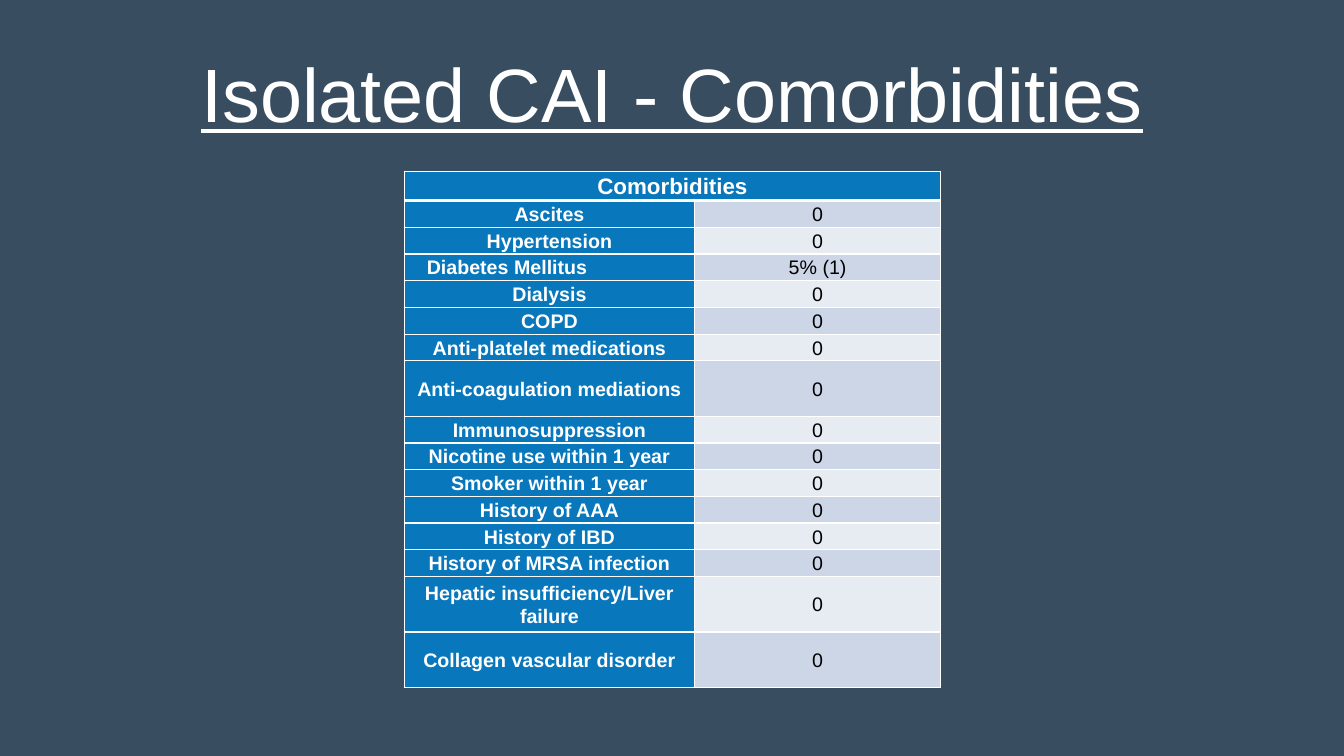
from lxml import etree
from pptx import Presentation
from pptx import util as u
from pptx.dml import color
from pptx.enum import text
from pptx.oxml import ns

BACKGROUND = color.RGBColor(0x38, 0x4D, 0x60)
BLUE = color.RGBColor(0x08, 0x77, 0xBC)
BAND_DARK = color.RGBColor(0xCC, 0xD6, 0xE7)
BAND_LIGHT = color.RGBColor(0xE7, 0xEC, 0xF3)
WHITE = color.RGBColor(0xFF, 0xFF, 0xFF)
BLACK = color.RGBColor(0, 0, 0)

TABBED = "\tDiabetes Mellitus\t"
TALL_ROWS = {
    "Anti-coagulation mediations",
    "Hepatic insufficiency/Liver failure",
    "Collagen vascular disorder",
}
COMORBIDITIES = [
    ("Ascites", "0"),
    ("Hypertension", "0"),
    (TABBED, "5% (1)"),
    ("Dialysis", "0"),
    ("COPD", "0"),
    ("Anti-platelet medications", "0"),
    ("Anti-coagulation mediations", "0"),
    ("Immunosuppression", "0"),
    ("Nicotine use within 1 year", "0"),
    ("Smoker within 1 year", "0"),
    ("History of AAA", "0"),
    ("History of IBD", "0"),
    ("History of MRSA infection", "0"),
    ("Hepatic insufficiency/Liver failure", "0"),
    ("Collagen vascular disorder", "0"),
]


class Deck:
    font = "Arial"

    def __init__(self):
        self.prs = Presentation()
        self.prs.slide_width = u.Inches(13.33)
        self.prs.slide_height = u.Inches(7.5)
        self.s = self.prs.slides.add_slide(self.prs.slide_layouts[5])
        self.s.background.fill.solid()
        self.s.background.fill.fore_color.rgb = BACKGROUND

    def run(self, p, words, size, rgb, bold=False, underline=False):
        r = p.add_run()
        r.text = words
        r.font.name = self.font
        r.font.size = u.Pt(size)
        r.font.color.rgb = rgb
        r.font.bold = bold
        r.font.underline = underline

    def title(self, words):
        sp = self.s.shapes.title
        sp.left, sp.top = u.Inches(0), u.Inches(0.25)
        sp.width, sp.height = u.Inches(13.33), u.Inches(1.45)
        tf = sp.text_frame
        tf.word_wrap = True
        tf.vertical_anchor = text.MSO_ANCHOR.MIDDLE
        p = tf.paragraphs[0]
        p.alignment = text.PP_ALIGN.CENTER
        p.line_spacing = 0.9
        self.run(p, words, 54, WHITE, underline=True)

    def borders(self, cell, top=1, bottom=1):
        tc_pr = cell._tc.get_or_add_tcPr()
        for side, width in (("L", 1), ("R", 1), ("T", top), ("B", bottom)):
            ln = etree.SubElement(tc_pr, ns.qn(f"a:ln{side}"), w=str(u.Pt(width)))
            fill = etree.SubElement(ln, ns.qn("a:solidFill"))
            etree.SubElement(fill, ns.qn("a:srgbClr"), val=str(WHITE))

    def tabs(self, p):
        tab_list = etree.SubElement(p._p.get_or_add_pPr(), ns.qn("a:tabLst"))
        for pos, align in ((0.95, "ctr"), (1.91, "r")):
            etree.SubElement(tab_list, ns.qn("a:tab"), pos=str(u.Inches(pos)), algn=align)

    def cell(self, cell, words, fill, size=14, rgb=WHITE, bold=True, top=1, bottom=1):
        self.borders(cell, top, bottom)
        cell.fill.solid()
        cell.fill.fore_color.rgb = fill
        cell.vertical_anchor = text.MSO_ANCHOR.MIDDLE
        cell.margin_left = cell.margin_right = u.Inches(0.07)
        cell.margin_top = cell.margin_bottom = u.Inches(0)
        p = cell.text_frame.paragraphs[0]
        p.line_spacing = 1.07
        if "\t" in words:
            p.alignment = text.PP_ALIGN.LEFT
            self.tabs(p)
        else:
            p.alignment = text.PP_ALIGN.CENTER
        if words:
            self.run(p, words, size, rgb, bold)

    def table(self, heading, rows):
        height, header, tall = 5.12, 0.29, 0.55
        short = (height - header - tall * len(TALL_ROWS)) / (len(rows) - len(TALL_ROWS))
        frame = self.s.shapes.add_table(
            len(rows) + 1, 2, u.Inches(4.01), u.Inches(1.7), u.Inches(5.32), u.Inches(height))
        grid = frame.table
        grid.columns[0].width = u.Inches(2.88)
        grid.columns[1].width = u.Inches(2.44)
        grid.rows[0].height = u.Inches(header)
        grid.cell(0, 0).merge(grid.cell(0, 1))
        for col, words in enumerate((heading, "")):
            self.cell(grid.cell(0, col), words, BLUE, size=16, bottom=3)
        for i, (label, value) in enumerate(rows, 1):
            grid.rows[i].height = u.Inches(tall if label in TALL_ROWS else short)
            top = 3 if i == 1 else 1
            band = BAND_DARK if i % 2 else BAND_LIGHT
            self.cell(grid.cell(i, 0), label, BLUE, top=top)
            self.cell(grid.cell(i, 1), value, band, rgb=BLACK, bold=False, top=top)


def main():
    deck = Deck()
    deck.title("Isolated CAI - Comorbidities")
    deck.table("Comorbidities", COMORBIDITIES)
    deck.prs.save("out.pptx")


if __name__ == "__main__":
    main()
